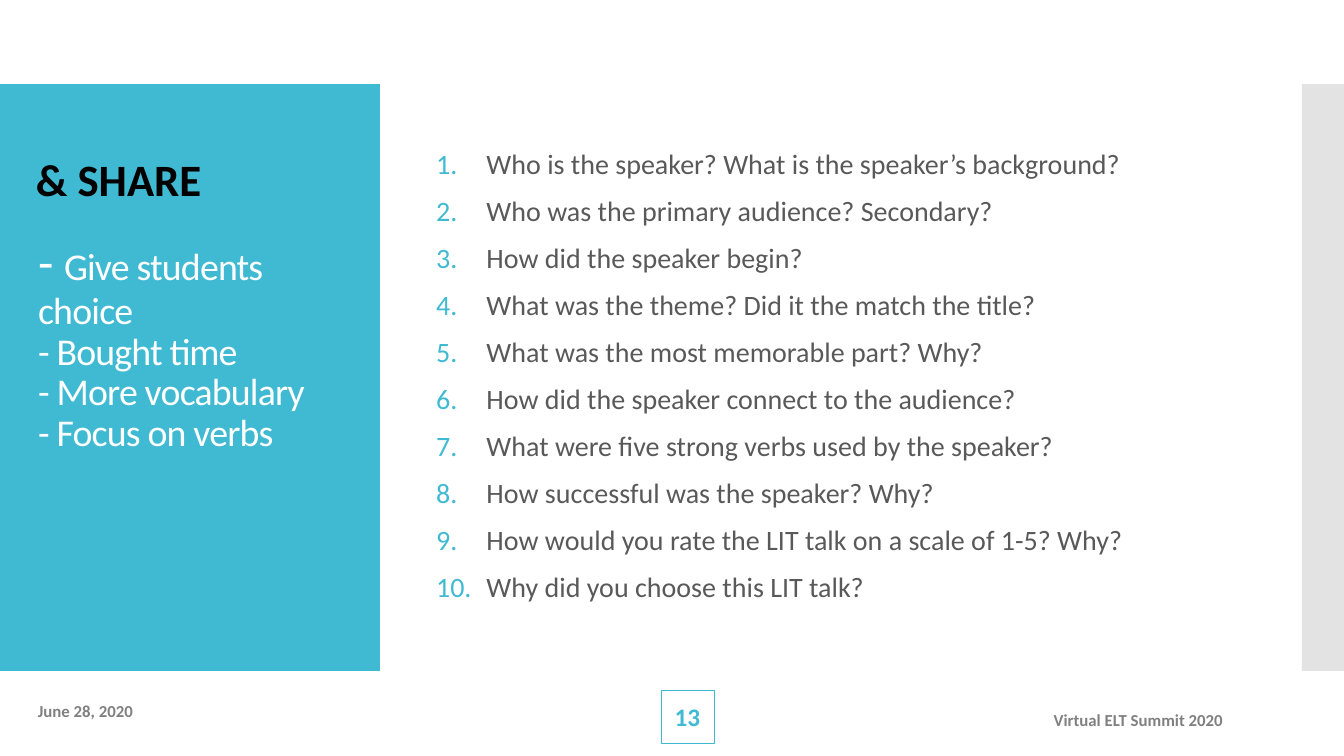
from lxml.etree import SubElement
from pptx import Presentation
from pptx.dml.color import RGBColor
from pptx.enum.shapes import MSO_SHAPE as SHAPE
from pptx.enum.text import MSO_ANCHOR as ANCHOR, MSO_AUTO_SIZE as AUTO, PP_ALIGN as ALIGN
from pptx.oxml.ns import qn
from pptx.util import Emu, Inches, Pt

COLORS = {"accent": "40BAD2", "strip": "C8C8C8", "white": "FFFFFF",
          "text": "595959", "footer": "808080", "black": "000000"}
FONT = "Calibri"
QUESTIONS = [
    "Who is the speaker? What is the speaker’s background?",
    "Who was the primary audience? Secondary?",
    "How did the speaker begin?",
    "What was the theme? Did it the match the title?",
    "What was the most memorable part? Why?",
    "How did the speaker connect to the audience?",
    "What were five strong verbs used by the speaker?",
    "How successful was the speaker? Why?",
    "How would you rate the LIT talk on a scale of 1-5? Why?",
    "Why did you choose this LIT talk?",
]
TIPS = [
    [("- ", 36), ("Give students choice", 27)],
    [("- Bought time", 27)],
    [("- More vocabulary", 27)],
    [("- Focus on verbs", 27)],
]


def px(n):
    return Emu(round(n * 914400 / 100.8))


def rgb(name):
    return RGBColor.from_string(COLORS[name])


def place(sp, box):
    sp.left, sp.top, sp.width, sp.height = map(px, box)


def add_run(p, text, size, color, bold=False):
    r = p.add_run()
    r.text = text
    r.font.name, r.font.size, r.font.bold = FONT, Pt(size), bold
    r.font.color.rgb = rgb(color)
    return r


def setup_frame(tf, anchor):
    tf.word_wrap = True
    tf.auto_size = AUTO.NONE
    tf.vertical_anchor = anchor


def add_rect(s, box, fill=None, line=None, weight=1):
    sp = s.shapes.add_shape(SHAPE.RECTANGLE, *map(px, box))
    sp.shadow.inherit = False
    if fill:
        sp.fill.solid()
        sp.fill.fore_color.rgb = rgb(fill)
    else:
        sp.fill.background()
    if line:
        sp.line.color.rgb = rgb(line)
        sp.line.width = Pt(weight)
    else:
        sp.line.fill.background()
    return sp


def add_label(s, box, text, align):
    tf = s.shapes.add_textbox(*map(px, box)).text_frame
    setup_frame(tf, ANCHOR.MIDDLE)
    p = tf.paragraphs[0]
    p.alignment = align
    add_run(p, text, 12, "footer", True)


def draw_sidebar(s, box):
    x, y, w, h = box
    add_rect(s, box, "accent")
    title = s.shapes.title
    title.element.getparent().append(title.element)
    place(title, (x + 28, y + 148, 325, 300))
    tf = title.text_frame
    setup_frame(tf, ANCHOR.TOP)
    for i, tip in enumerate(TIPS):
        p = tf.add_paragraph() if i else tf.paragraphs[0]
        p.alignment, p.line_spacing = ALIGN.LEFT, 0.9
        p.space_before = Pt(0)
        for text, size in tip:
            r = add_run(p, text, size, "white")
            r.font._element.set("spc", "-60")
    sp = add_rect(s, (x + 26, y + 63, 272, 65), line="accent", weight=2)
    setup_frame(sp.text_frame, ANCHOR.TOP)
    p = sp.text_frame.paragraphs[0]
    p.alignment = ALIGN.LEFT
    add_run(p, "& SHARE", 32, "black", True)


def draw_strip(s, box):
    sp = add_rect(s, box, "strip")
    color = sp.element.spPr.find(qn("a:solidFill"))[0]
    SubElement(color, qn("a:alpha"), val="50000")


def draw_questions(s, box):
    body = s.placeholders[1]
    place(body, box)
    tf = body.text_frame
    setup_frame(tf, ANCHOR.MIDDLE)
    for i, question in enumerate(QUESTIONS):
        p = tf.add_paragraph() if i else tf.paragraphs[0]
        p.alignment, p.line_spacing = ALIGN.LEFT, 0.9
        p.space_before = Pt(12)
        pPr = p._p.get_or_add_pPr()
        indent = Inches(0.5)
        pPr.set("marL", str(indent))
        pPr.set("indent", str(-indent))
        color = SubElement(pPr, qn("a:buClr"))
        SubElement(color, qn("a:srgbClr"), val=COLORS["accent"])
        SubElement(pPr, qn("a:buFont"), typeface=FONT)
        SubElement(pPr, qn("a:buAutoNum"), type="arabicPeriod")
        add_run(p, question, 20, "text")


def draw_footer(s, box):
    x, y, w, h = box
    add_label(s, (x + 28, y + 20, 302, 40), "June 28, 2020", ALIGN.LEFT)
    add_label(s, (x + 1029, y + 29, 204, 40), "Virtual ELT Summit 2020", ALIGN.RIGHT)
    sp = add_rect(s, (x + 661, y + 19, 53, 53), line="accent", weight=0.5)
    setup_frame(sp.text_frame, ANCHOR.MIDDLE)
    p = sp.text_frame.paragraphs[0]
    p.alignment = ALIGN.CENTER
    add_run(p, "13", 18, "accent", True)


def main():
    prs = Presentation()
    prs.slide_width, prs.slide_height = px(1344), px(756)
    s = prs.slides.add_slide(prs.slide_layouts[1])
    draw_sidebar(s, (0, 84, 380, 587))
    draw_strip(s, (1302, 84, 42, 587))
    draw_questions(s, (426, 95, 806, 564))
    draw_footer(s, (0, 671, 1344, 85))
    prs.save("out.pptx")


if __name__ == "__main__":
    main()
